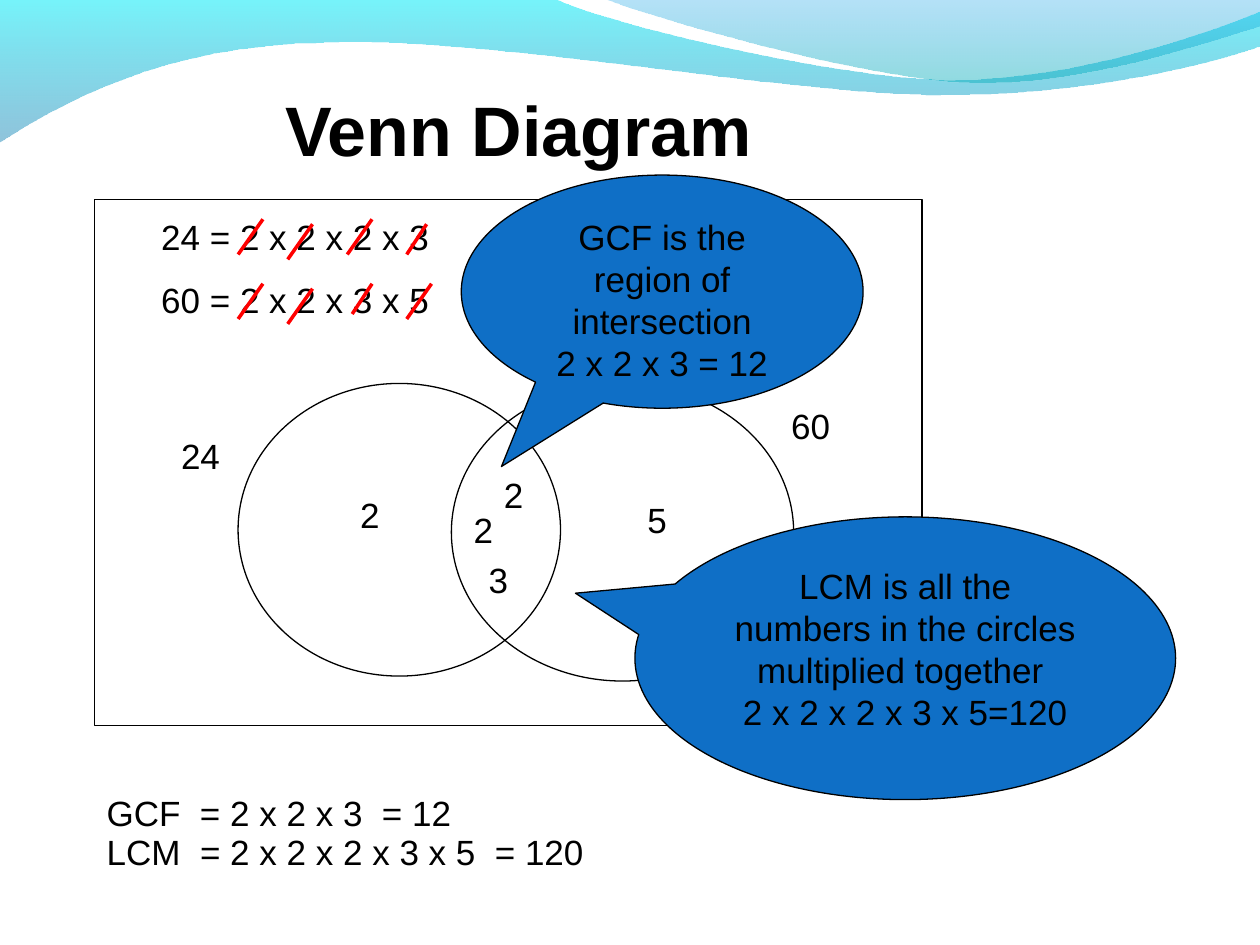
from dataclasses import dataclass

from lxml import etree
from pptx import Presentation
from pptx.dml.color import RGBColor
from pptx.enum.shapes import MSO_CONNECTOR, MSO_SHAPE
from pptx.enum.text import MSO_ANCHOR, PP_ALIGN
from pptx.oxml.ns import qn
from pptx.util import Cm, Pt

OVAL, RECT = MSO_SHAPE.OVAL, MSO_SHAPE.RECTANGLE
CALLOUT = MSO_SHAPE.OVAL_CALLOUT
STRAIGHT = MSO_CONNECTOR.STRAIGHT
TOP = MSO_ANCHOR.TOP
LEFT, CENTER = PP_ALIGN.LEFT, PP_ALIGN.CENTER


@dataclass(frozen=True)
class Theme:
    font: str = "Arial"
    body: int = 20
    title: int = 40
    outline: float = 0.75
    strike: float = 2
    ink: RGBColor = RGBColor(0, 0, 0)
    red: RGBColor = RGBColor(0xFF, 0, 0)
    blue: RGBColor = RGBColor(0x0F, 0x6F, 0xC6)
    # gradient stops: colour and opacity in percent
    back_wave: tuple = (("0079AF", 44), ("00EBF8", 54))
    front_wave: tuple = (("00ADB6", 44), ("009BE5", 29))


THEME = Theme()

# Waves in cm: one point is a straight step, three points are a Bezier step
BACK_WAVE = [
    [(-0.03, -0.03)],
    [(11.18, -0.03)],
    [(12.09, 0.43), (16.87, 1.6), (19.25, 1.6)],
    [(21.67, 1.6), (24.33, 0.66), (25.4, 0.23)],
    [(25.43, 0.91)],
    [(24.97, 1.12), (22.1, 1.93), (18.95, 1.91)],
    [(15.8, 1.91), (9.7, 0.71), (6.53, 0.86)],
    [(3.28, 0.89), (1.17, 2.11), (-0.03, 2.87)],
]
FRONT_WAVE = [
    [(12.17, -0.03)],
    [(12.93, 0.28), (17.32, 1.57), (19.53, 1.65)],
    [(21.74, 1.75), (24.41, 0.81), (25.4, 0.53)],
    [(25.4, -0.03)],
]

LABELS = [
    ("24", 3.4, 8.64), ("60", 15.7, 8.03), ("2", 9.91, 9.42), ("2", 9.3, 10.13),
    ("3", 9.6, 11.13), ("2", 7.01, 9.83), ("5", 12.8, 9.93),
]

LONG, SHORT = (0.5, 0.71), (0.4, 0.61)
STRIKES = [
    (4.8, 4.42, LONG), (5.8, 4.52, LONG), (7, 4.42, LONG), (8.2, 4.52, SHORT),
    (4.8, 5.72, LONG), (5.8, 5.82, LONG), (7.1, 5.72, SHORT), (8.2, 5.72, LONG),
]


def bend(sp, steps):
    """Turn each run of three line segments of a Bezier step into one curve."""
    lines = iter(list(sp._element.iter(qn("a:lnTo"))))
    for step in steps[1:]:
        segments = [next(lines) for _ in step]
        if len(segments) == 3:
            curve = etree.Element(qn("a:cubicBezTo"))
            segments[0].addprevious(curve)
            for segment in segments:
                curve.append(segment[0])
                segment.getparent().remove(segment)


def add_wave(s, steps, stops):
    points = [(round(x * 100), round(y * 100)) for step in steps for x, y in step]
    builder = s.shapes.build_freeform(*points[0], scale=Cm(0.01))
    builder.add_line_segments(points[1:], close=True)
    sp = builder.convert_to_shape()
    bend(sp, steps)
    sp.shadow.inherit = False
    sp.line.fill.background()
    sp.fill.gradient()
    sp.fill.gradient_angle = 90
    for stop, (color, _) in zip(sp.fill.gradient_stops, stops):
        stop.color.rgb = RGBColor.from_string(color)
    colors = list(sp._element.spPr.iter(qn("a:srgbClr")))
    for element, (_, opacity) in zip(colors, stops):
        etree.SubElement(element, qn("a:alpha")).set("val", str(opacity * 1000))


def write(tf, lines, size=THEME.body, bold=False, align=LEFT, gap=0):
    """Fill a text frame; gap is the space in points between paragraphs."""
    tf.word_wrap = True
    tf.vertical_anchor = TOP
    tf.text = "\n".join(lines)
    for i, p in enumerate(tf.paragraphs):
        p.alignment = align
        if i and gap:
            p.space_before = Pt(gap)
        for r in p.runs:
            r.font.name = THEME.font
            r.font.size = Pt(size)
            r.font.bold = bold
            r.font.color.rgb = THEME.ink


def add_text(s, x, y, w, h, lines, **style):
    box = s.shapes.add_textbox(Cm(x), Cm(y), Cm(w), Cm(h))
    write(box.text_frame, lines, **style)


def add_outlined(s, kind, x, y, w, h):
    sp = s.shapes.add_shape(kind, Cm(x), Cm(y), Cm(w), Cm(h))
    sp.shadow.inherit = False
    sp.fill.background()
    sp.line.color.rgb = THEME.ink
    sp.line.width = Pt(THEME.outline)
    return sp


def add_callout(s, x, y, w, h, tip, lines):
    sp = add_outlined(s, CALLOUT, x, y, w, h)
    sp.fill.solid()
    sp.fill.fore_color.rgb = THEME.blue
    sp.adjustments[0], sp.adjustments[1] = tip
    write(sp.text_frame, lines, align=CENTER)


def add_strike(s, x, y, size):
    w, h = size
    line = s.shapes.add_connector(STRAIGHT, Cm(x + w), Cm(y), Cm(x), Cm(y + h))
    line.line.color.rgb = THEME.red
    line.line.width = Pt(THEME.strike)
    etree.SubElement(line._element.spPr, qn("a:effectLst"))


def main():
    prs = Presentation()
    prs.slide_width, prs.slide_height = Cm(25.4), Cm(19.05)
    s = prs.slides.add_slide(prs.slide_layouts[6])

    add_wave(s, BACK_WAVE, THEME.back_wave)
    add_wave(s, FRONT_WAVE, THEME.front_wave)

    add_outlined(s, OVAL, 4.8, 7.73, 6.5, 5.9)
    add_outlined(s, OVAL, 9.1, 7.73, 6.9, 6)
    add_outlined(s, RECT, 1.9, 4.02, 16.69, 10.6)

    add_text(s, 2.8, 1.62, 15.3, 1.96, ["Venn Diagram"],
             size=THEME.title, bold=True, align=CENTER)
    add_text(s, 3, 4.22, 9, 3.63,
             ["24 = 2 x 2 x 2 x 3", "60 = 2 x 2 x 3 x 5"], gap=12)
    for text, x, y in LABELS:
        add_text(s, x, y, 0.6 + 0.4 * len(text), 1.1, [text])
    for strike in STRIKES:
        add_strike(s, *strike)
    add_text(s, 1.9, 15.83, 16.3, 1.1, ["GCF  = 2 x 2 x 3  = 12"])
    add_text(s, 1.9, 16.62, 16.3, 1.1, ["LCM  = 2 x 2 x 2 x 3 x 5  = 120"])

    add_callout(s, 9.3, 3.53, 8.1, 4.7, (-0.4, 0.75),
                ["GCF is the region of intersection", "2 x 2 x 3 = 12"])
    add_callout(s, 12.8, 10.42, 10.9, 5.7, (-0.61, -0.23),
                ["LCM is all the numbers in the circles multiplied together ",
                 "2 x 2 x 2 x 3 x 5=120"])
    prs.save("out.pptx")


if __name__ == "__main__":
    main()
